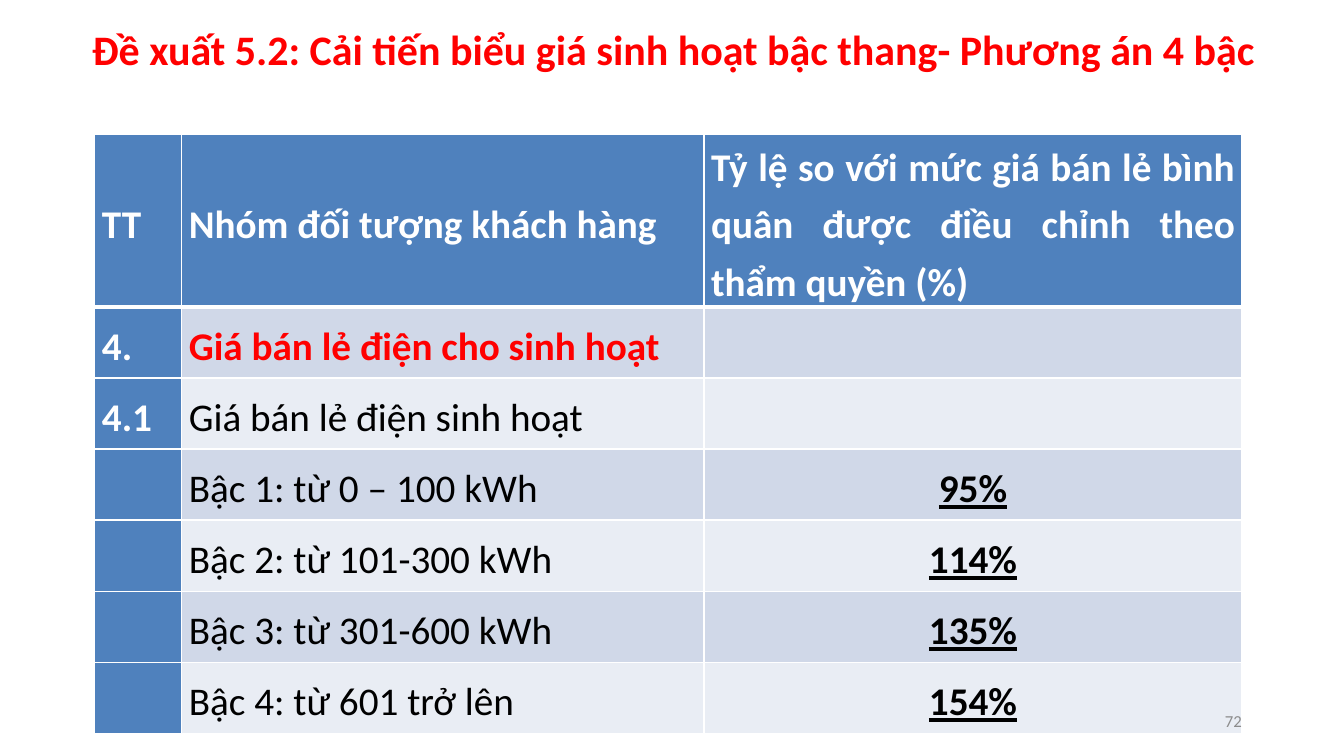
from lxml.etree import SubElement
from pptx import Presentation
from pptx.dml.color import RGBColor
from pptx.enum.text import MSO_ANCHOR, PP_ALIGN
from pptx.oxml.ns import qn
from pptx.util import Cm, Pt


def style(para, size, color, align, bold=False, underline=False):
    para.alignment = align
    font = para.font
    font.name, font.size = "Calibri", Pt(size)
    font.bold, font.underline = bold, underline
    font.color.rgb = RGBColor.from_string(color)


def add_border(cell, side, width):
    line = SubElement(cell._tc.get_or_add_tcPr(), qn(f"a:{side}"), w=str(Pt(width)))
    SubElement(SubElement(line, qn("a:solidFill")), qn("a:srgbClr"), val="FFFFFF")


deck = Presentation()
deck.slide_width, deck.slide_height = Cm(33.87), Cm(19.05)
page = deck.slides.add_slide(deck.slide_layouts[5])

# Title
title = page.shapes.title
title.left, title.top, title.width, title.height = Cm(2.06), Cm(0.3), Cm(30.53), Cm(2)
title.text_frame.text = "Đề xuất 5.2: Cải tiến biểu giá sinh hoạt bậc thang- Phương án 4 bậc"
title.text_frame.vertical_anchor = MSO_ANCHOR.MIDDLE
heading = title.text_frame.paragraphs[0]
style(heading, 30, "FF0000", PP_ALIGN.JUSTIFY, bold=True)
heading.line_spacing = 0.9

# Tariff table
rows = [
    ("TT", "Nhóm đối tượng khách hàng",
     "Tỷ lệ so với mức giá bán lẻ bình quân được điều chỉnh theo thẩm quyền (%)"),
    ("4.", "Giá bán lẻ điện cho sinh hoạt", ""),
    ("4.1", "Giá bán lẻ điện sinh hoạt", ""),
    ("", "Bậc 1: từ 0 – 100 kWh", "95%"),
    ("", "Bậc 2: từ 101-300 kWh", "114%"),
    ("", "Bậc 3: từ 301-600 kWh", "135%"),
    ("", "Bậc 4: từ 601 trở lên", "154%"),
]
widths = [2.19, 13.16, 13.56]
header_height, row_height = 4.34, 1.79
table = page.shapes.add_table(
    len(rows), len(widths), Cm(2.39), Cm(3.39), Cm(sum(widths)),
    Cm(header_height + row_height * (len(rows) - 1))).table
table.first_row = table.horz_banding = False
for column, width in zip(table.columns, widths):
    column.width = Cm(width)

for r, texts in enumerate(rows):
    table.rows[r].height = Cm(row_height if r else header_height)
    for c, text in enumerate(texts):
        cell = table.cell(r, c)
        cell.text = text
        cell.vertical_anchor = MSO_ANCHOR.MIDDLE
        cell.margin_left = cell.margin_right = Cm(0.18)
        cell.margin_top = cell.margin_bottom = 0

        # Header row and first column are blue, the rest is banded
        blue = r == 0 or c == 0
        section = r == 1 and c == 1
        rate = r > 0 and c == 2
        color = "FFFFFF" if blue else "FF0000" if section else "000000"
        para = cell.text_frame.paragraphs[0]
        style(para, 28, color, PP_ALIGN.CENTER if rate else PP_ALIGN.JUSTIFY,
              bold=blue or section or rate, underline=rate)
        para.line_spacing = 1.2

        # Borders come before the fill in the cell properties
        for side in ("lnL", "lnR", "lnT", "lnB"):
            thick = (r == 0 and side == "lnB") or (r == 1 and side == "lnT")
            add_border(cell, side, 3 if thick else 1)
        cell.fill.solid()
        band = "D0D8E8" if r % 2 else "E9EDF4"
        cell.fill.fore_color.rgb = RGBColor.from_string("4F81BD" if blue else band)

# Page number
box = page.shapes.add_textbox(Cm(23.93), Cm(17.65), Cm(7.62), Cm(1.02))
box.text_frame.word_wrap = True
box.text_frame.vertical_anchor = MSO_ANCHOR.MIDDLE
box.text_frame.text = "72"
style(box.text_frame.paragraphs[0], 12, "8C8C8C", PP_ALIGN.RIGHT)

deck.save("out.pptx")
